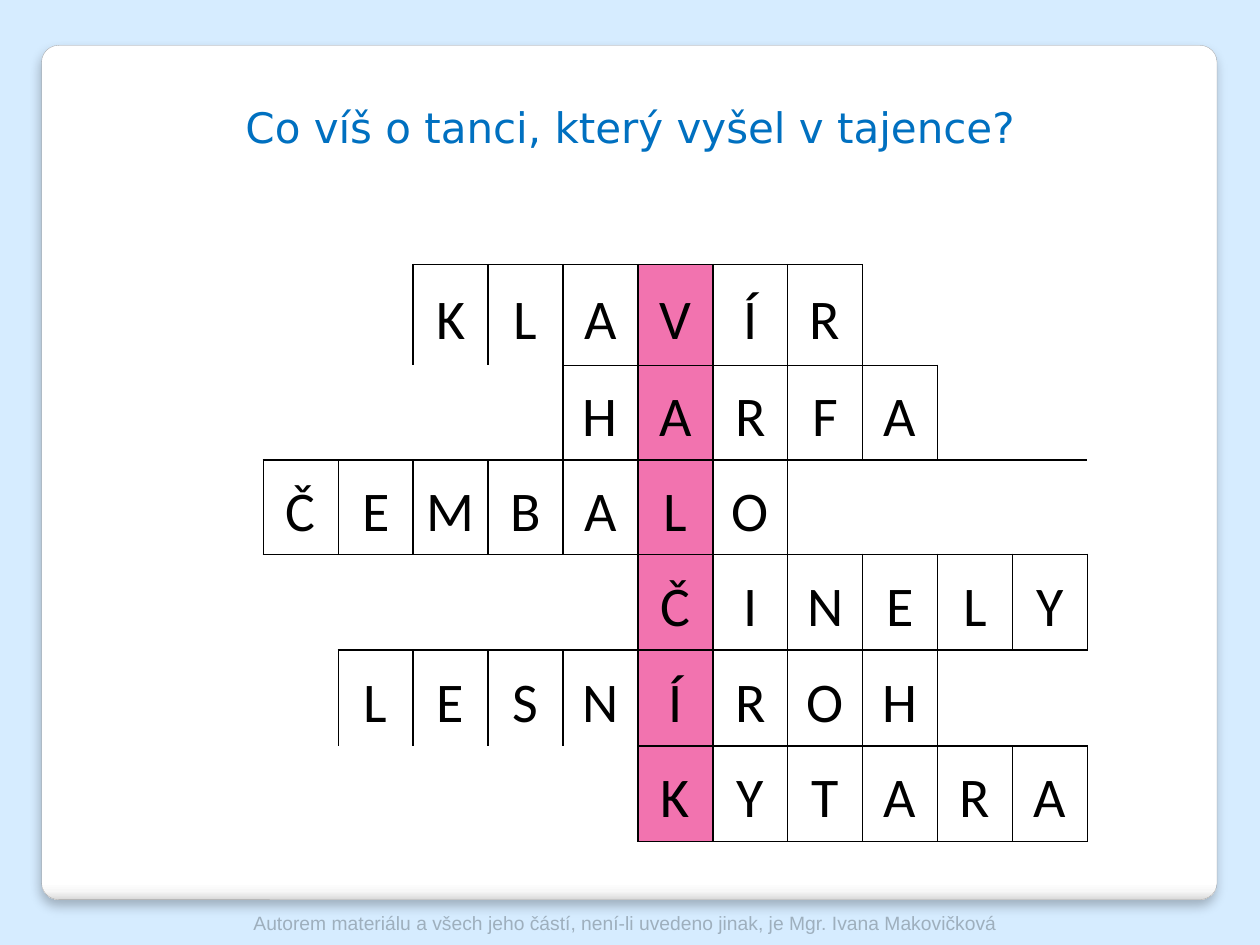
from lxml.etree import SubElement
from pptx import Presentation
from pptx.dml.color import RGBColor
from pptx.enum.shapes import MSO_SHAPE as Preset
from pptx.enum.text import MSO_ANCHOR as Anchor, PP_ALIGN as Align
from pptx.oxml.ns import qn
from pptx.util import Inches, Pt

ANSWERS = [
    (2, "KLAVÍR", "R", "LB"),
    (4, "HARFA", "RB", "L"),
    (0, "ČEMBALO", "", "LTB"),
    (5, "ČINELY", "TR", ""),
    (1, "LESNÍROH", "R", "LTB"),
    (5, "KYTARA", "R", ""),
]
ROW_HEIGHTS = [0.8, 0.75, 0.75, 0.76, 0.76, 0.76]
COLUMN_COUNT = 11
SECRET_COLUMN = 5
CARD_STOPS = [(0, "FFFFFF"), (98, "FFFFFF"), (99, "F7F7F7"), (100, "DADADA")]


def color(value):
    return RGBColor.from_string(value)


def add_color(parent, value):
    return SubElement(parent, qn("a:srgbClr"), val=value)


class CrosswordSlide:
    ink = "000000"
    highlight = "F273AF"
    letter_font = "Calibri"

    def __init__(self, presentation, background):
        self.slide = presentation.slides.add_slide(presentation.slide_layouts[6])
        fill = self.slide.background.fill
        fill.solid()
        fill.fore_color.rgb = color(background)

    def add_run(self, paragraph, text, size, font, hex_color):
        run = paragraph.add_run()
        run.text = text
        run.font.size = Pt(size)
        run.font.name = font
        run.font.color.rgb = color(hex_color)

    def add_card(self, left, top, width, height):
        shape = self.slide.shapes.add_shape(
            Preset.ROUNDED_RECTANGLE,
            Inches(left), Inches(top), Inches(width), Inches(height))
        shape.adjustments[0] = 0.02
        shape.fill.gradient()
        shape.fill.gradient_angle = 270
        properties = shape._element.spPr
        stops = properties.find(".//" + qn("a:gsLst"))
        for stop in list(stops):
            stops.remove(stop)
        for position, value in CARD_STOPS:
            add_color(SubElement(stops, qn("a:gs"), pos=str(position * 1000)), value)
        shape.line.color.rgb = color("A4A4A4")
        shape.line.width = Pt(0.16)
        shape.shadow.inherit = False
        shadow = SubElement(
            properties.find(qn("a:effectLst")), qn("a:outerShdw"),
            blurRad=str(Pt(6)), dist=str(Pt(4)), dir="5400000", rotWithShape="0")
        SubElement(add_color(shadow, self.ink), qn("a:alpha"), val="25000")

    def add_text(self, left, top, width, height, text, size, font, hex_color, align):
        box = self.slide.shapes.add_textbox(
            Inches(left), Inches(top), Inches(width), Inches(height))
        box.text_frame.word_wrap = True
        paragraph = box.text_frame.paragraphs[0]
        paragraph.alignment = align
        self.add_run(paragraph, text, size, font, hex_color)

    def set_borders(self, cell, sides):
        properties = cell._tc.get_or_add_tcPr()
        for side in "LRTB":
            line = SubElement(properties, qn("a:ln" + side), w=str(Pt(1)))
            if side in sides:
                add_color(SubElement(line, qn("a:solidFill")), self.ink)
            else:
                SubElement(line, qn("a:noFill"))

    def add_blank(self, table, row, first, end, sides):
        if first == end:
            return
        for column in range(first, end):
            cell = table.cell(row, column)
            self.set_borders(cell, sides)
            cell.fill.background()
        if end - first > 1:
            table.cell(row, first).merge(table.cell(row, end - 1))

    def add_letter(self, cell, letter, highlighted):
        self.set_borders(cell, "LRTB")
        if highlighted:
            cell.fill.solid()
            cell.fill.fore_color.rgb = color(self.highlight)
        else:
            cell.fill.background()
        cell.vertical_anchor = Anchor.MIDDLE
        cell.margin_left = cell.margin_right = Inches(0.07)
        cell.margin_top = cell.margin_bottom = 0
        paragraph = cell.text_frame.paragraphs[0]
        paragraph.alignment = Align.CENTER
        paragraph.line_spacing = 1.15
        self.add_run(paragraph, letter, 32, self.letter_font, self.ink)

    def add_crossword(self, left, top, width):
        table = self.slide.shapes.add_table(
            len(ANSWERS), COLUMN_COUNT, Inches(left), Inches(top),
            Inches(width), Inches(sum(ROW_HEIGHTS))).table
        table.first_row = table.horz_banding = False
        for column in table.columns:
            column.width = Inches(width / COLUMN_COUNT)
        for row, (start, word, before, after) in enumerate(ANSWERS):
            table.rows[row].height = Inches(ROW_HEIGHTS[row])
            end = start + len(word)
            self.add_blank(table, row, 0, start, before)
            for column, letter in enumerate(word, start):
                self.add_letter(table.cell(row, column), letter, column == SECRET_COLUMN)
            self.add_blank(table, row, end, COLUMN_COUNT, after)


def main():
    presentation = Presentation()
    presentation.slide_width = Inches(10)
    presentation.slide_height = Inches(7.5)
    page = CrosswordSlide(presentation, "D6ECFF")
    page.add_card(0.33, 0.36, 9.33, 6.78)
    page.add_crossword(2.09, 2.1, 6.54)
    page.add_text(1.85, 0.76, 7.17, 0.5, "Co víš o tanci, který vyšel v tajence?",
                  24, "DejaVu Sans", "0070C0", Align.LEFT)
    page.add_text(1.4, 7.18, 7.13, 0.28,
                  "Autorem materiálu a všech jeho částí, není-li uvedeno jinak, "
                  "je Mgr. Ivana Makovičková",
                  11, "Arial", "9EAFBD", Align.CENTER)
    presentation.save("out.pptx")


if __name__ == "__main__":
    main()
